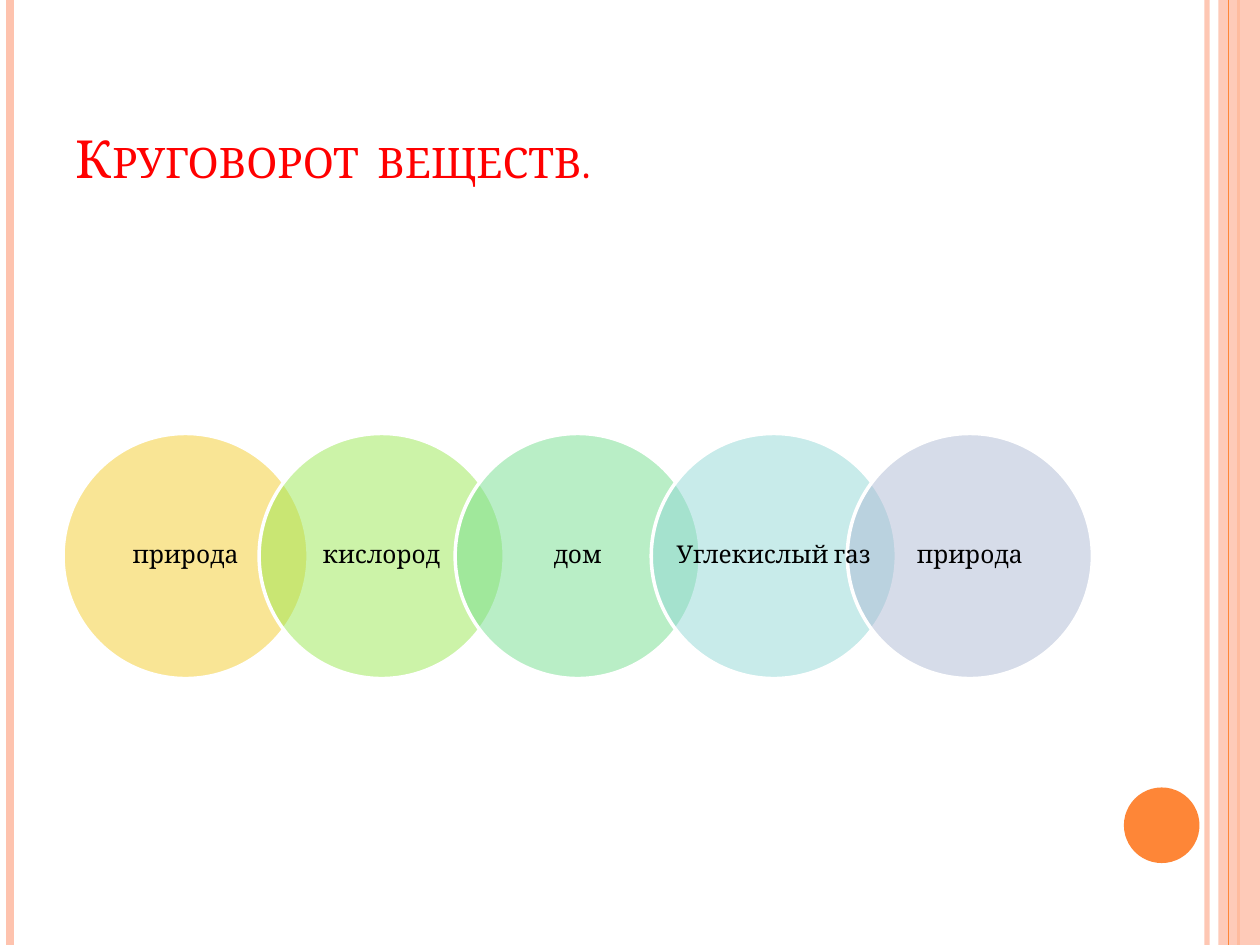
"""Build a slide with a chain of five overlapping circles showing the cycle of substances."""
import dataclasses
import typing

import pptx
import pptx.dml.color
import pptx.enum.shapes
import pptx.enum.text
import pptx.oxml
import pptx.oxml.ns
import pptx.util

Inches = pptx.util.Inches
Pt = pptx.util.Pt
WIDTH, HEIGHT = 10, 7.5
FONT = "Cambria"
COLORS = {
    "white": "FFFFFF", "black": "000000", "title": "FF0000",
    "peach": "FEC3AE", "orange": "FE8637",
    "yellow": "F5CD2D", "lime": "9AE853", "green": "75DE8F",
    "teal": "93D8D6", "lavender": "AEBAD5",
}


@dataclasses.dataclass
class Stripe:
    x: float
    color: str
    weight: float
    opacity: int = 100


@dataclasses.dataclass
class Link:
    label: str
    color: str


BACK_STRIPES = [Stripe(9.58, "peach", 3, 93), Stripe(0.08, "peach", 4.5),
                Stripe(9.83, "orange", 1.5)]
FRONT_STRIPE = Stripe(9.75, "orange", 0.75)
LINKS = [Link("природа", "yellow"), Link("кислород", "lime"), Link("дом", "green"),
         Link("Углекислый газ", "teal"), Link("природа", "lavender")]

CONTENT_LEFT, CONTENT_WIDTH = 0.5, 8.17
CHAIN_TOP = 3.44
STEP_SHARE = 0.8
DIAMETER = CONTENT_WIDTH / (1 + STEP_SHARE * (len(LINKS) - 1))


def rgb(name: str) -> pptx.dml.color.RGBColor:
    return pptx.dml.color.RGBColor.from_string(COLORS[name])


def paint(fill: typing.Any, color: str, opacity: int = 100) -> None:
    fill.solid()
    fill.fore_color.rgb = rgb(color)
    if opacity < 100:
        tint = fill._xPr.find(".//" + pptx.oxml.ns.qn("a:srgbClr"))
        tint.append(pptx.oxml.parse_xml(
            f'<a:alpha {pptx.oxml.ns.nsdecls("a")} val="{opacity * 1000}"/>'))


def add_stripe(page: typing.Any, stripe: Stripe) -> None:
    line = page.shapes.add_connector(
        pptx.enum.shapes.MSO_CONNECTOR.STRAIGHT,
        Inches(stripe.x), 0, Inches(stripe.x), Inches(HEIGHT))
    line.line.width = Pt(stripe.weight)
    paint(line.line.fill, stripe.color, stripe.opacity)
    line._element.spPr.append(
        pptx.oxml.parse_xml(f'<a:effectLst {pptx.oxml.ns.nsdecls("a")}/>'))


def add_figure(page: typing.Any, kind: str, left: float, top: float, width: float,
               height: float, color: str, opacity: int = 100) -> typing.Any:
    shape = page.shapes.add_shape(
        pptx.enum.shapes.MSO_SHAPE[kind],
        Inches(left), Inches(top), Inches(width), Inches(height))
    shape.shadow.inherit = False
    shape.line.fill.background()
    paint(shape.fill, color, opacity)
    return shape


def write(para: typing.Any, text: str, size: float, color: str) -> typing.Any:
    span = para.add_run()
    span.text = text
    span.font.name = FONT
    span.font.size = Pt(size)
    span.font.color.rgb = rgb(color)
    return span


def link_left(index: int) -> float:
    return CONTENT_LEFT + index * STEP_SHARE * DIAMETER


def add_circle(page: typing.Any, index: int, link: Link) -> None:
    circle = add_figure(page, "OVAL", link_left(index), CHAIN_TOP,
                        DIAMETER, DIAMETER, link.color, 50)
    paint(circle.line.fill, "white")
    circle.line.width = Pt(2)


def add_label(page: typing.Any, index: int, link: Link) -> None:
    box = page.shapes.add_textbox(Inches(link_left(index)), Inches(CHAIN_TOP),
                                  Inches(DIAMETER), Inches(DIAMETER))
    frame = box.text_frame
    frame.word_wrap = True
    frame.vertical_anchor = pptx.enum.text.MSO_ANCHOR.MIDDLE
    frame.margin_left = frame.margin_right = Inches(0.11)
    frame.margin_top = frame.margin_bottom = Inches(0.02)
    para = frame.paragraphs[0]
    para.alignment = pptx.enum.text.PP_ALIGN.CENTER
    para.line_spacing = 0.9
    write(para, link.label, 14, "black")


def set_title(page: typing.Any, text: str) -> None:
    box = page.shapes.title
    box.left, box.top = Inches(CONTENT_LEFT), Inches(0.3)
    box.width, box.height = Inches(CONTENT_WIDTH), Inches(1.25)
    frame = box.text_frame
    frame.auto_size = pptx.enum.text.MSO_AUTO_SIZE.NONE
    frame.vertical_anchor = pptx.enum.text.MSO_ANCHOR.BOTTOM
    para = frame.paragraphs[0]
    para.alignment = pptx.enum.text.PP_ALIGN.LEFT
    span = write(para, text, 30, "title")
    span.font._element.set("cap", "small")


def main() -> None:
    deck = pptx.Presentation()
    deck.slide_width, deck.slide_height = Inches(WIDTH), Inches(HEIGHT)
    page = deck.slides.add_slide(deck.slide_layouts.get_by_name("Title Only"))
    for stripe in BACK_STRIPES:
        add_stripe(page, stripe)
    add_figure(page, "RECTANGLE", 9.67, 0, 0.33, HEIGHT, "peach", 87)
    add_stripe(page, FRONT_STRIPE)
    add_figure(page, "OVAL", 8.92, 6.25, 0.6, 0.6, "orange")
    set_title(page, "Круговорот  веществ.")
    for draw in (add_circle, add_label):
        for index, link in enumerate(LINKS):
            draw(page, index, link)
    deck.save("out.pptx")


if __name__ == "__main__":
    main()
